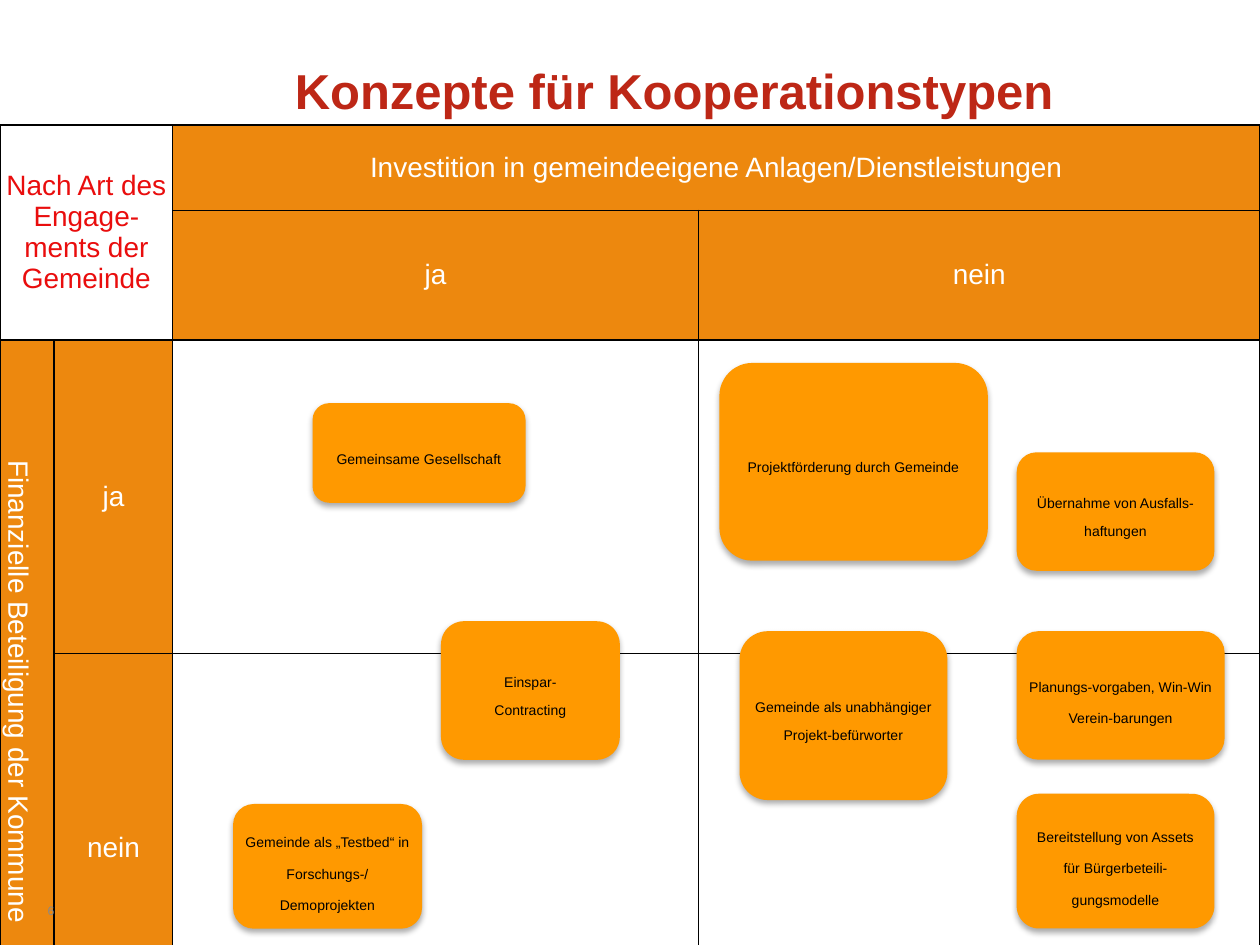
"""Build a slide with a matrix of cooperation types between municipality and project."""
from lxml import etree
from pptx import Presentation
from pptx.dml.color import RGBColor
from pptx.enum.shapes import MSO_SHAPE
from pptx.enum.text import MSO_ANCHOR, PP_ALIGN
from pptx.oxml.ns import qn
from pptx.util import Pt

ROUNDED = MSO_SHAPE.ROUNDED_RECTANGLE
MIDDLE = MSO_ANCHOR.MIDDLE
CENTER, LEFT = PP_ALIGN.CENTER, PP_ALIGN.LEFT

FONT = "Arial"
COLORS = {
    "title": "BD2716", "corner": "E90D0D", "header": "ED880E", "card": "FF9900",
    "white": "FFFFFF", "black": "000000", "number": "898989",
}
TITLE = "Konzepte für Kooperationstypen"
TITLE_BOX = (76.32, 20.16, 617.76, 62.64)
PAGE_NUMBER = "6"
NUMBER_BOX = (20.16, 502.56, 167.76, 28.8)

TABLE_LEFT, TABLE_TOP = 0, 71.28
COLUMN_WIDTHS = [31, 67.7, 300.5, 320.8]
ROW_HEIGHTS = [49, 38.2, 179.3, 222.5]
CELLS = [
    ["Nach Art des Engage-ments der Gemeinde", "",
     "Investition in gemeindeeigene Anlagen/Dienstleistungen", ""],
    ["", "", "ja", "nein"],
    ["Finanzielle Beteiligung der Kommune", "ja", "", ""],
    ["", "nein", "", ""],
]
MERGES = [((0, 0), (1, 1)), ((0, 2), (0, 3)), ((2, 0), (3, 0))]

TIGHT, LOOSE = 1.67, 1.86
CARDS = [
    ("Planungs-vorgaben, Win-Win Verein-barungen", (581, 360.7, 118.8, 73.4), LOOSE),
    ("Gemeinde als „Testbed“ in Forschungs-/ Demoprojekten", (133.2, 459.4, 108, 71.3), LOOSE),
    ("Übernahme von Ausfalls-haftungen", (581, 258.5, 113, 67.7), TIGHT),
    ("Gemeinsame Gesellschaft", (178.6, 230.4, 121.7, 56.9), TIGHT),
    ("Einspar-\nContracting", (252, 355, 102.2, 79.2), TIGHT),
    ("Bereitstellung von Assets für Bürgerbeteili-gungsmodelle", (581, 453.6, 113, 77), LOOSE),
    ("Gemeinde als unabhängiger Projekt-befürworter", (422.6, 360.7, 118.8, 96.5), TIGHT),
    ("Projektförderung durch Gemeinde", (411.1, 207.4, 153.4, 113), TIGHT),
]


def rgb(name):
    """Return the named colour."""
    return RGBColor.from_string(COLORS[name])


def points(values):
    """Convert numbers to lengths in points."""
    return [Pt(value) for value in values]


def write(frame, text, size, color, alignment=CENTER, bold=False, spacing=None):
    """Fill a text frame and format its paragraphs."""
    frame.text = text
    frame.word_wrap = True
    for paragraph in frame.paragraphs:
        paragraph.alignment = alignment
        if spacing:
            paragraph.line_spacing = spacing
        for run in paragraph.runs:
            run.font.name, run.font.size, run.font.bold = FONT, Pt(size), bold
            run.font.color.rgb = rgb(color)


def add_color(parent, name):
    """Append a colour element and return it."""
    return etree.SubElement(parent, qn("a:srgbClr"), val=COLORS[name])


def style_cell(cell, row, column):
    """Set the fill, margins, text and borders of one cell."""
    corner = row < 2 and column < 2
    body = row > 1 and column > 1
    properties = cell._tc.get_or_add_tcPr()
    for side in ("a:lnL", "a:lnR", "a:lnT", "a:lnB"):
        line = etree.SubElement(properties, qn(side), w=str(Pt(1)))
        add_color(etree.SubElement(line, qn("a:solidFill")), "black")
    cell.fill.solid()
    cell.fill.fore_color.rgb = rgb("white" if corner or body else "header")
    cell.margin_left = cell.margin_right = Pt(2.9)
    cell.margin_top = cell.margin_bottom = Pt(1.4)
    cell.vertical_anchor = MIDDLE
    write(cell.text_frame, CELLS[row][column], 16, "corner" if corner else "white")


def add_matrix(slide):
    """Add the table with its merged header cells."""
    table = slide.shapes.add_table(
        len(ROW_HEIGHTS), len(COLUMN_WIDTHS), Pt(TABLE_LEFT), Pt(TABLE_TOP),
        Pt(sum(COLUMN_WIDTHS)), Pt(sum(ROW_HEIGHTS))).table
    table.first_row = table.horz_banding = False
    for column, width in zip(table.columns, COLUMN_WIDTHS):
        column.width = Pt(width)
    for row, height in zip(table.rows, ROW_HEIGHTS):
        row.height = Pt(height)
    for row in range(len(ROW_HEIGHTS)):
        for column in range(len(COLUMN_WIDTHS)):
            style_cell(table.cell(row, column), row, column)
    for first, last in MERGES:
        table.cell(*first).merge(table.cell(*last))
    table.cell(2, 0)._tc.get_or_add_tcPr().set("vert", "vert")


def add_card(slide, text, box, spacing):
    """Add a rounded card with a soft shadow below it."""
    card = slide.shapes.add_shape(ROUNDED, *points(box))
    card.fill.solid()
    card.fill.fore_color.rgb = rgb("card")
    card.line.fill.background()
    card.shadow.inherit = False
    effects = card._element.spPr.find(qn("a:effectLst"))
    shadow = etree.SubElement(effects, qn("a:outerShdw"), blurRad=str(Pt(3.5)),
                              dist=str(Pt(2.2)), dir="5400000", rotWithShape="0")
    etree.SubElement(add_color(shadow, "black"), qn("a:alpha"), val="32000")
    frame = card.text_frame
    frame.margin_left = frame.margin_right = Pt(2.9)
    frame.margin_top = frame.margin_bottom = 0
    frame.vertical_anchor = MIDDLE
    write(frame, text, 8, "black", spacing=spacing)


def main():
    """Build and save the presentation."""
    presentation = Presentation()
    presentation.slide_width, presentation.slide_height = Pt(720), Pt(540)
    slide = presentation.slides.add_slide(presentation.slide_layouts[5])
    title = slide.shapes.title
    title.left, title.top, title.width, title.height = points(TITLE_BOX)
    title.text_frame.vertical_anchor = MIDDLE
    write(title.text_frame, TITLE, 28, "title", bold=True)
    add_matrix(slide)
    for text, box, spacing in CARDS:
        add_card(slide, text, box, spacing)
    number = slide.shapes.add_textbox(*points(NUMBER_BOX))
    number.text_frame.vertical_anchor = MIDDLE
    write(number.text_frame, PAGE_NUMBER, 7, "number", LEFT, spacing=LOOSE)
    presentation.save("out.pptx")


if __name__ == "__main__":
    main()
